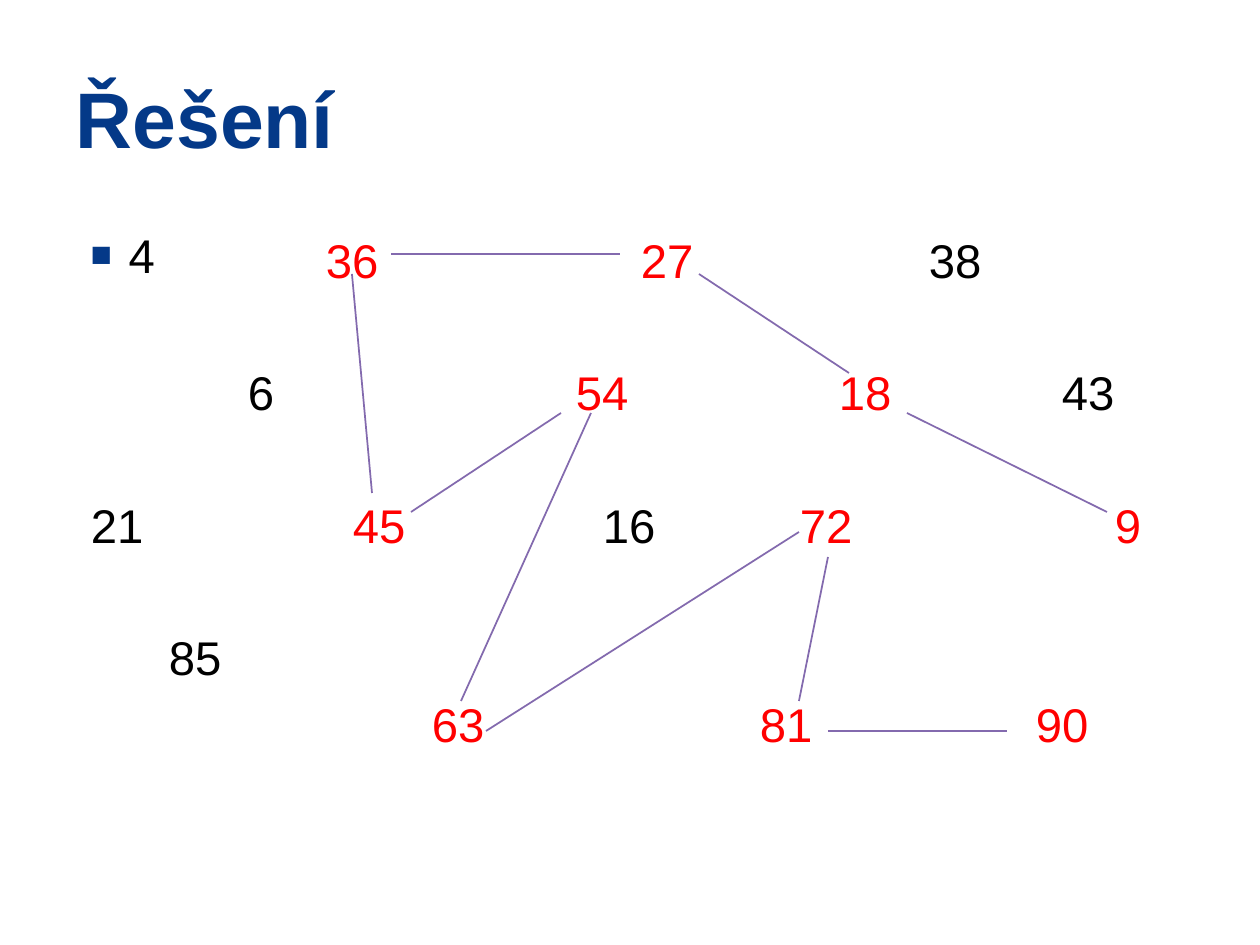
import pptx
import pptx.dml.color
import pptx.enum.shapes
import pptx.enum.text
import pptx.oxml.ns
import pptx.util
from lxml import etree

EMU_PER_PX = 914400 / 126
BLUE = pptx.dml.color.RGBColor(0x04, 0x39, 0x88)
BLACK = pptx.dml.color.RGBColor(0x00, 0x00, 0x00)
RED = pptx.dml.color.RGBColor(0xFF, 0x00, 0x00)
PURPLE = pptx.dml.color.RGBColor(0x83, 0x6A, 0xAE)

FONT = "Arial"
FIRST_LINE_TOP = 231
LINE_PITCH = 66.25
NUMBER_WIDTH, NUMBER_HEIGHT = 60, 54

# Text line on the slide: (left edge in px, number) of each entry.
NUMBER_ROWS = {
    0: [(326, 36), (641, 27), (929, 38)],
    2: [(248, 6), (576, 54), (839, 18), (1062, 43)],
    4: [(91, 21), (353, 45), (603, 16), (800, 72), (1115, 9)],
    6: [(169, 85)],
    7: [(432, 63), (760, 81), (1036, 90)],
}
PATH_LINES = [
    (1107, 512, 907, 413),
    (849, 373, 699, 274),
    (620, 254, 391, 254),
    (352, 274, 372, 493),
    (411, 512, 561, 413),
    (591, 413, 461, 701),
    (486, 731, 799, 532),
    (828, 557, 799, 701),
    (828, 731, 1007, 731),
]


def px(length):
    return pptx.util.Emu(round(length * EMU_PER_PX))


def place(shape, left, top, width, height):
    shape.left, shape.top = px(left), px(top)
    shape.width, shape.height = px(width), px(height)


def add_property(paragraph, tag, **attributes):
    """Append a child such as a bullet setting to the paragraph properties."""
    properties = paragraph._p.get_or_add_pPr()
    return etree.SubElement(properties, pptx.oxml.ns.qn(tag), attributes)


def add_text(paragraph, text, size, color, bold=False):
    run = paragraph.add_run()
    run.text = text
    run.font.name = FONT
    run.font.size = pptx.util.Pt(size)
    run.font.bold = bold
    run.font.color.rgb = color


def add_number(paragraph, number):
    """Multiples of nine, which form the path, are red."""
    add_text(paragraph, str(number), 27, BLACK if number % 9 else RED)


def fill_title(title):
    place(title, 63, 39, 1134, 157)
    title.text_frame.vertical_anchor = pptx.enum.text.MSO_ANCHOR.MIDDLE
    paragraph = title.text_frame.paragraphs[0]
    paragraph.alignment = pptx.enum.text.PP_ALIGN.LEFT
    add_text(paragraph, "Řešení", 45, BLUE, bold=True)


def fill_body(body):
    place(body, 63, 220, 1134, 624)
    body.text_frame.auto_size = pptx.enum.text.MSO_AUTO_SIZE.NONE
    bullet = body.text_frame.paragraphs[0]
    bullet.space_before = pptx.util.Pt(3)
    properties = bullet._p.get_or_add_pPr()
    properties.set("marL", str(px(53)))
    properties.set("indent", str(px(-38)))
    color = add_property(bullet, "a:buClr")
    etree.SubElement(color, pptx.oxml.ns.qn("a:srgbClr"), val=str(BLUE))
    add_property(bullet, "a:buSzPct", val="75000")
    add_property(bullet, "a:buFont", typeface=FONT)
    add_property(bullet, "a:buChar", char="■")
    add_number(bullet, 4)


def add_number_box(slide, left, top, number):
    box = slide.shapes.add_textbox(
        *map(px, (left, top, NUMBER_WIDTH, NUMBER_HEIGHT)))
    frame = box.text_frame
    frame.word_wrap = True
    frame.margin_left = frame.margin_right = 0
    frame.margin_top = frame.margin_bottom = 0
    add_number(frame.paragraphs[0], number)


def add_line(slide, *ends):
    line = slide.shapes.add_connector(
        pptx.enum.shapes.MSO_CONNECTOR.STRAIGHT, *map(px, ends))
    line.line.color.rgb = PURPLE
    line.line.width = pptx.util.Pt(1)
    etree.SubElement(line._element.spPr, pptx.oxml.ns.qn("a:effectLst"))


def main():
    presentation = pptx.Presentation()
    presentation.slide_width = pptx.util.Inches(10)
    presentation.slide_height = pptx.util.Inches(7.5)
    slide = presentation.slides.add_slide(presentation.slide_layouts[1])
    fill_title(slide.shapes.title)
    fill_body(slide.placeholders[1])
    for line_index, entries in NUMBER_ROWS.items():
        top = FIRST_LINE_TOP + line_index * LINE_PITCH
        for left, number in entries:
            add_number_box(slide, left, top, number)
    for ends in PATH_LINES:
        add_line(slide, *ends)
    presentation.save("out.pptx")


if __name__ == "__main__":
    main()
